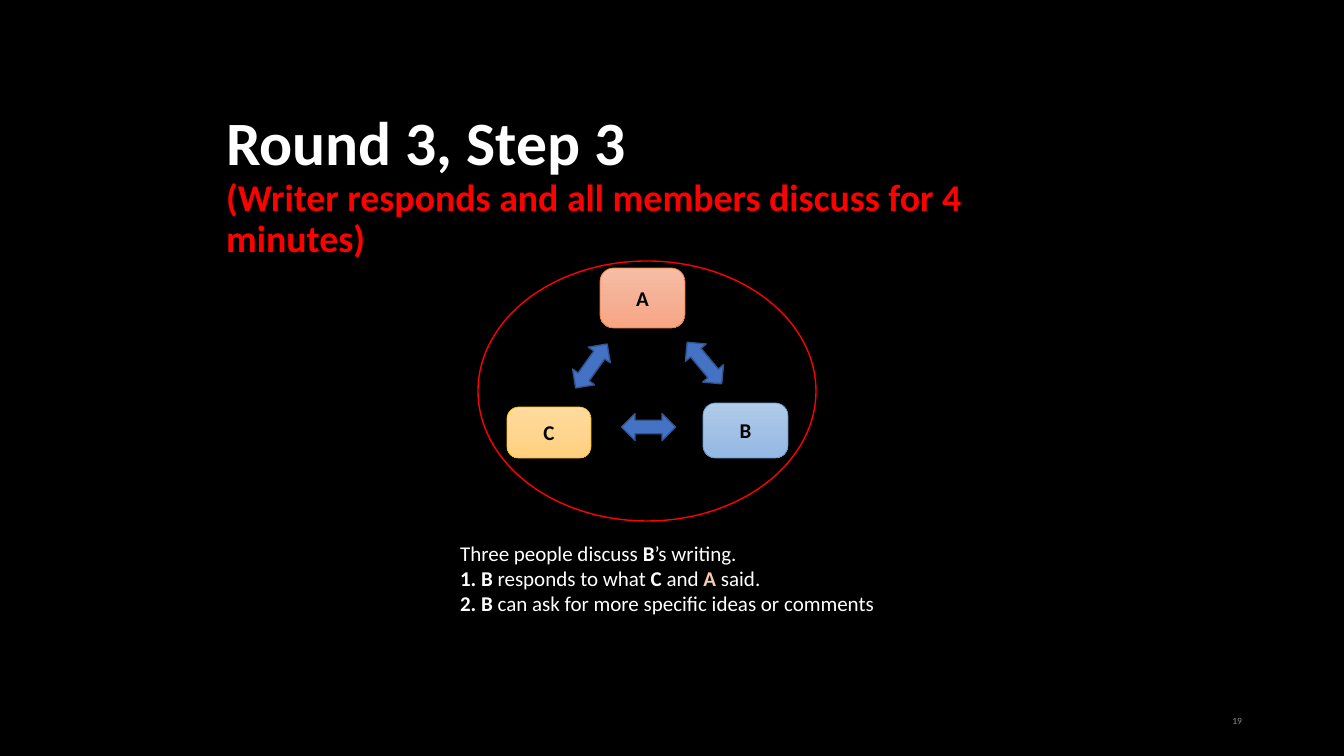
from lxml import etree
from pptx import Presentation
from pptx.dml.color import RGBColor
from pptx.enum.shapes import MSO_SHAPE
from pptx.enum.text import MSO_ANCHOR, MSO_AUTO_SIZE, PP_ALIGN
from pptx.oxml.ns import qn
from pptx.util import Pt

CARD, ARROW, OVAL = MSO_SHAPE.ROUNDED_RECTANGLE, MSO_SHAPE.UP_DOWN_ARROW, MSO_SHAPE.OVAL
LEFT, MID, RIGHT = PP_ALIGN.LEFT, PP_ALIGN.CENTER, PP_ALIGN.RIGHT
CENTRE, TOP = MSO_ANCHOR.MIDDLE, MSO_ANCHOR.TOP
GROW, FIXED = MSO_AUTO_SIZE.SHAPE_TO_FIT_TEXT, MSO_AUTO_SIZE.NONE
WIDE, HIGH = 1344, 756
SCALE = 12192000 / WIDE


class Theme:
    font = "Calibri"
    back, text, red, grey, peach = "000000", "FFFFFF", "FF0000", "8C8C8C", "F8CBAD"
    blue, edge = "4472C4", "325491"
    head, sub, body, small = 44, 27, 15, 6.8


def px(*sizes):
    """Turn pixel lengths into a list of EMU lengths."""
    return [round(size * SCALE) for size in sizes]


def write(para, text, size=Theme.body, color=Theme.text, bold=False):
    run = para.add_run()
    run.text = text
    font = run.font
    font.name, font.size, font.bold = Theme.font, Pt(size), bold
    font.color.rgb = RGBColor.from_string(color)


deck = Presentation()
deck.slide_width, deck.slide_height = px(WIDE, HIGH)
slide = deck.slides.add_slide(deck.slide_layouts[1])
slide.background.fill.solid()
slide.background.fill.fore_color.rgb = RGBColor.from_string(Theme.back)
shapes = slide.shapes

# Title, list and page number
title, body = shapes.title, slide.placeholders[1]
page = shapes.add_textbox(*px(950, 701, 302, 40))
for box, place, anchor, fit in (
    (title, (216, 110, 891, 153), CENTRE, FIXED),
    (body, (450, 535, 469, 87), TOP, GROW),
    (page, (950, 701, 302, 40), CENTRE, FIXED),
):
    box.left, box.top, box.width, box.height = px(*place)
    frame = box.text_frame
    frame.word_wrap, frame.vertical_anchor, frame.auto_size = True, anchor, fit

para = title.text_frame.paragraphs[0]
para.alignment, para.line_spacing = LEFT, 0.9
write(para, "Round 3, Step 3", size=Theme.head, bold=True)
para.add_line_break()
write(para, "(Writer responds and all members discuss for 4 minutes)",
      size=Theme.sub, color=Theme.red, bold=True)

para = page.text_frame.paragraphs[0]
para.alignment = RIGHT
write(para, "19", size=Theme.small, color=Theme.grey)

plain, strong = {}, {"bold": True}
peach = {"bold": True, "color": Theme.peach}
lines = (
    (("Three people discuss ", plain), ("B", strong), ("’s writing.", plain)),
    (("B ", strong), ("responds to what ", plain), ("C ", strong),
     ("and ", plain), ("A ", peach), ("said.", plain)),
    (("B ", strong), ("can ask for more specific ideas or comments", plain)),
)
frame = body.text_frame
for row, parts in enumerate(lines):
    para = frame.add_paragraph() if row else frame.paragraphs[0]
    para.space_before = Pt(0)
    props = para._p.get_or_add_pPr()
    indent = px(21)[0] if row else 0
    props.set("marL", str(indent))
    props.set("indent", str(-indent))
    if row:
        etree.SubElement(props, qn("a:buFont"), typeface="+mj-lt")
        etree.SubElement(props, qn("a:buAutoNum"), type="arabicPeriod")
    else:
        etree.SubElement(props, qn("a:buNone"))
    for text, style in parts:
        write(para, text, **style)

# Group members
for name, place, stops, edge in (
    ("A", (600, 268, 85, 60), ("F7BDA5", "F5B196", "F8A582"), "ED7D31"),
    ("B", (703, 403, 85, 55), ("B1CBE9", "A3C1E5", "93B9E4"), "5B9BD5"),
    ("C", (507, 407, 84, 51), ("FFDB9E", "FFD590", "FFD07C"), "FFC000"),
):
    card = shapes.add_shape(CARD, *px(*place))
    card.shadow.inherit = False
    card.adjustments[0] = 0.23
    card.fill.gradient()
    card.fill.gradient_angle = 270
    ramp = card._element.spPr.find(".//" + qn("a:gsLst"))
    ramp.clear()
    for step, color in enumerate(stops):
        stop = etree.SubElement(ramp, qn("a:gs"), pos=str(step * 50000))
        etree.SubElement(stop, qn("a:srgbClr"), val=color)
    card.line.color.rgb = RGBColor.from_string(edge)
    card.line.width = Pt(0.5)
    card.text_frame.vertical_anchor = CENTRE
    para = card.text_frame.paragraphs[0]
    para.alignment = MID
    write(para, name, color=Theme.back, bold=True)

# Arrows between members
for left, top, turn in ((691, 336, 320.3), (635, 400, 270), (578, 339, 35.6)):
    arrow = shapes.add_shape(ARROW, *px(left, top, 27, 54))
    arrow.shadow.inherit = False
    arrow.rotation = turn
    arrow.fill.solid()
    arrow.fill.fore_color.rgb = RGBColor.from_string(Theme.blue)
    arrow.line.color.rgb = RGBColor.from_string(Theme.edge)
    arrow.line.width = Pt(1)

ring = shapes.add_shape(OVAL, *px(478, 261, 338, 260))
ring.shadow.inherit = False
ring.fill.background()
ring.line.color.rgb = RGBColor.from_string(Theme.red)
ring.line.width = Pt(1)

deck.save("out.pptx")
